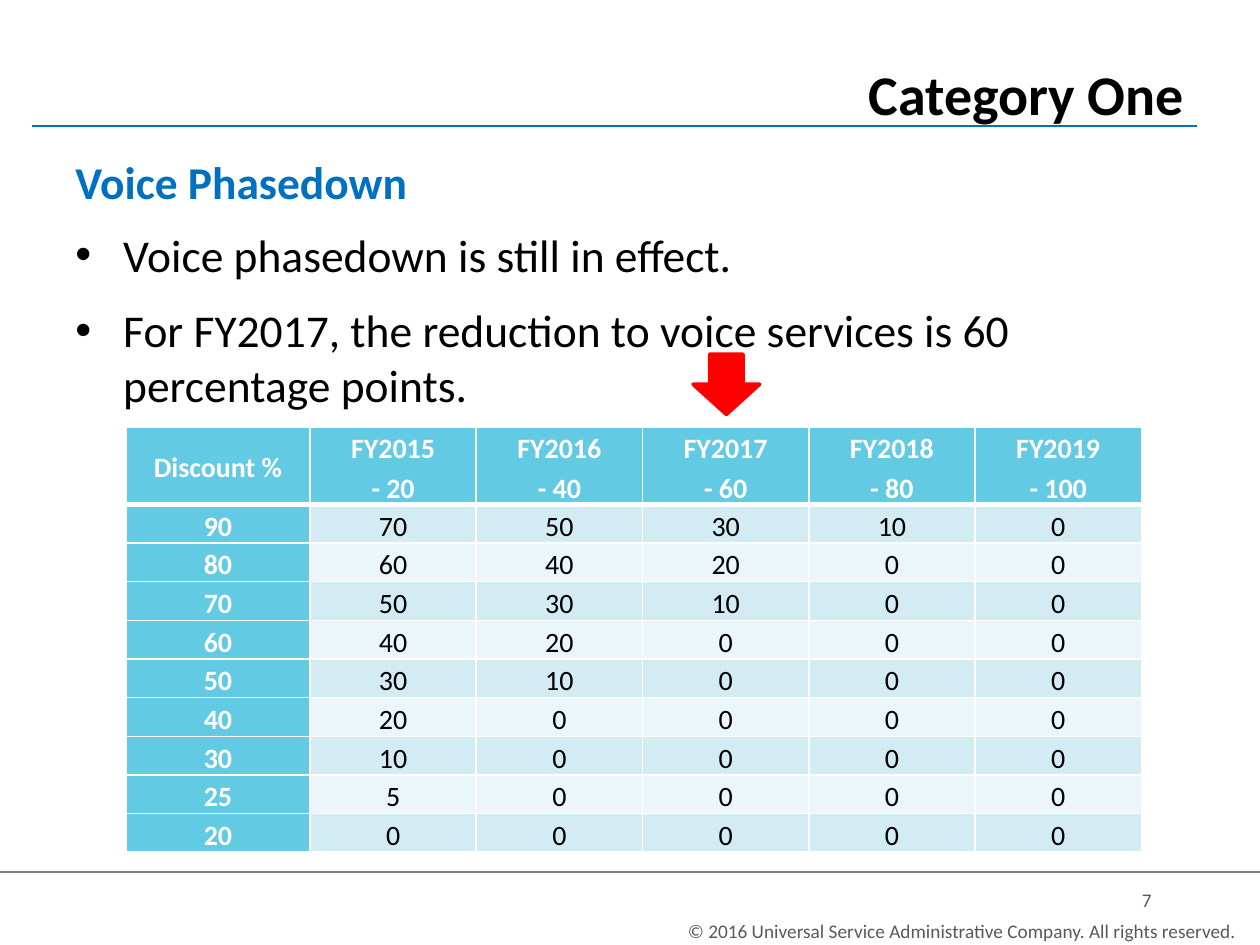
"""Build the Category One slide on the voice phasedown."""
from lxml.etree import SubElement
from pptx import Presentation
from pptx.dml.color import RGBColor
from pptx.enum.shapes import MSO_CONNECTOR, MSO_SHAPE
from pptx.enum.text import MSO_ANCHOR, MSO_AUTO_SIZE, PP_ALIGN
from pptx.oxml.ns import qn
from pptx.util import Inches, Pt

COLORS = {
    "black": "000000", "white": "FFFFFF", "blue": "0070C0", "gray": "808080",
    "small": "595959", "head": "62CAE3", "odd": "D3ECF4", "even": "EAF6FA",
    "red": "FF0000",
}
RATES = [90, 80, 70, 60, 50, 40, 30, 25, 20]
CUTS = [20, 40, 60, 80, 100]


def color(name):
    return RGBColor.from_string(COLORS[name])


def style(par, size, hue, bold=False, align=PP_ALIGN.LEFT):
    par.alignment = align
    font = par.font
    font.name, font.size, font.bold = "Calibri", Pt(size), bold
    font.color.rgb = color(hue)


def bullet(par):
    props = par._p.get_or_add_pPr()
    props.set("marL", str(Inches(0.38)))
    props.set("indent", str(-Inches(0.38)))
    SubElement(props, qn("a:buFont")).set("typeface", "Arial")
    SubElement(props, qn("a:buChar")).set("char", "•")
    par.space_after = Pt(12)


def add_text(slide, area, lines, size, hue, bold=False,
             align=PP_ALIGN.LEFT, dots=False):
    frame = slide.shapes.add_textbox(*map(Inches, area)).text_frame
    frame.word_wrap = True
    frame.text = "\n".join(lines)
    for par in frame.paragraphs:
        if dots:
            bullet(par)
        style(par, size, hue, bold, align)
    return frame


def add_title(slide, text):
    title = slide.shapes.title
    title.left, title.top = Inches(2.75), Inches(0.42)
    title.width, title.height = Inches(6.75), Inches(0.58)
    frame = title.text_frame
    frame.text = text
    frame.auto_size = MSO_AUTO_SIZE.NONE
    frame.vertical_anchor = MSO_ANCHOR.TOP
    style(frame.paragraphs[0], 32, "black", True, PP_ALIGN.RIGHT)


def add_rule(slide, left, right, top, hue, width):
    rule = slide.shapes.add_connector(
        MSO_CONNECTOR.STRAIGHT,
        Inches(left), Inches(top), Inches(right), Inches(top))
    rule.line.color.rgb = color(hue)
    rule.line.width = Pt(width)
    SubElement(rule._element.spPr, qn("a:effectLst"))


def add_edge(cell, side, width):
    props = cell._tc.get_or_add_tcPr()
    edge = SubElement(props, qn(f"a:ln{side}"), w=str(Pt(width)))
    fill = SubElement(edge, qn("a:solidFill"))
    SubElement(fill, qn("a:srgbClr"), val=COLORS["white"])


def fill_cell(cell, text, row, col):
    head = row == 0 or col == 0
    cell.text = text
    cell.vertical_anchor = MSO_ANCHOR.MIDDLE
    cell.margin_left = cell.margin_right = Inches(0.07)
    cell.margin_top = cell.margin_bottom = 0
    for par in cell.text_frame.paragraphs:
        par.line_spacing = 1.15
        style(par, 16, "white" if head else "black", head, PP_ALIGN.CENTER)
    add_edge(cell, "L", 1)
    add_edge(cell, "R", 1)
    add_edge(cell, "T", 3 if row == 1 else 1)
    add_edge(cell, "B", 3 if row == 0 else 1)
    cell.fill.solid()
    band = "odd" if row % 2 else "even"
    cell.fill.fore_color.rgb = color("head" if head else band)


def add_grid(slide):
    rows = [["Discount %"] + [f"FY{year}\n- {cut}"
                              for year, cut in enumerate(CUTS, 2015)]]
    rows += [[str(rate)] + [str(max(rate - cut, 0)) for cut in CUTS]
             for rate in RATES]
    table = slide.shapes.add_table(
        len(rows), len(rows[0]), Inches(1), Inches(3.39),
        Inches(8.08), Inches(2.95)).table
    for num, col in enumerate(table.columns):
        col.width = Inches(1.32 if num else 1.46)
    for num, row in enumerate(rows):
        table.rows[num].height = Inches(0.27 if num else 0.52)
        for col, text in enumerate(row):
            fill_cell(table.cell(num, col), text, num, col)


def add_arrow(slide):
    arrow = slide.shapes.add_shape(
        MSO_SHAPE.DOWN_ARROW, Inches(5.5), Inches(2.81),
        Inches(0.53), Inches(0.48))
    arrow.shadow.inherit = False
    arrow.fill.solid()
    arrow.fill.fore_color.rgb = color("red")
    arrow.line.color.rgb = color("red")
    arrow.line.width = Pt(2)


def main():
    deck = Presentation()
    deck.slide_width, deck.slide_height = Inches(10), Inches(7.5)
    slide = deck.slides.add_slide(deck.slide_layouts[5])
    add_text(slide, (0.08, 7.25, 9.83, 0.34),
             ["© 2016 Universal Service Administrative Company. "
              "All rights reserved."], 11, "small", align=PP_ALIGN.RIGHT)
    add_rule(slide, 0, 10, 6.92, "gray", 0.75)
    add_rule(slide, 0.25, 9.5, 1, "blue", 1.25)
    page = add_text(slide, (0.54, 7, 8.96, 0.34), ["7"], 11, "small",
                    align=PP_ALIGN.RIGHT)
    page.margin_right = Inches(0.36)
    add_text(slide, (0.5, 1.75, 9, 4.42),
             ["Voice phasedown is still in effect.",
              "For FY2017, the reduction to voice services is 60 "
              "percentage points."], 26, "black", dots=True)
    add_text(slide, (0.5, 1.17, 9, 0.67), ["Voice Phasedown"],
             26, "blue", True)
    add_title(slide, "Category One")
    add_grid(slide)
    add_arrow(slide)
    deck.save("out.pptx")


if __name__ == "__main__":
    main()
